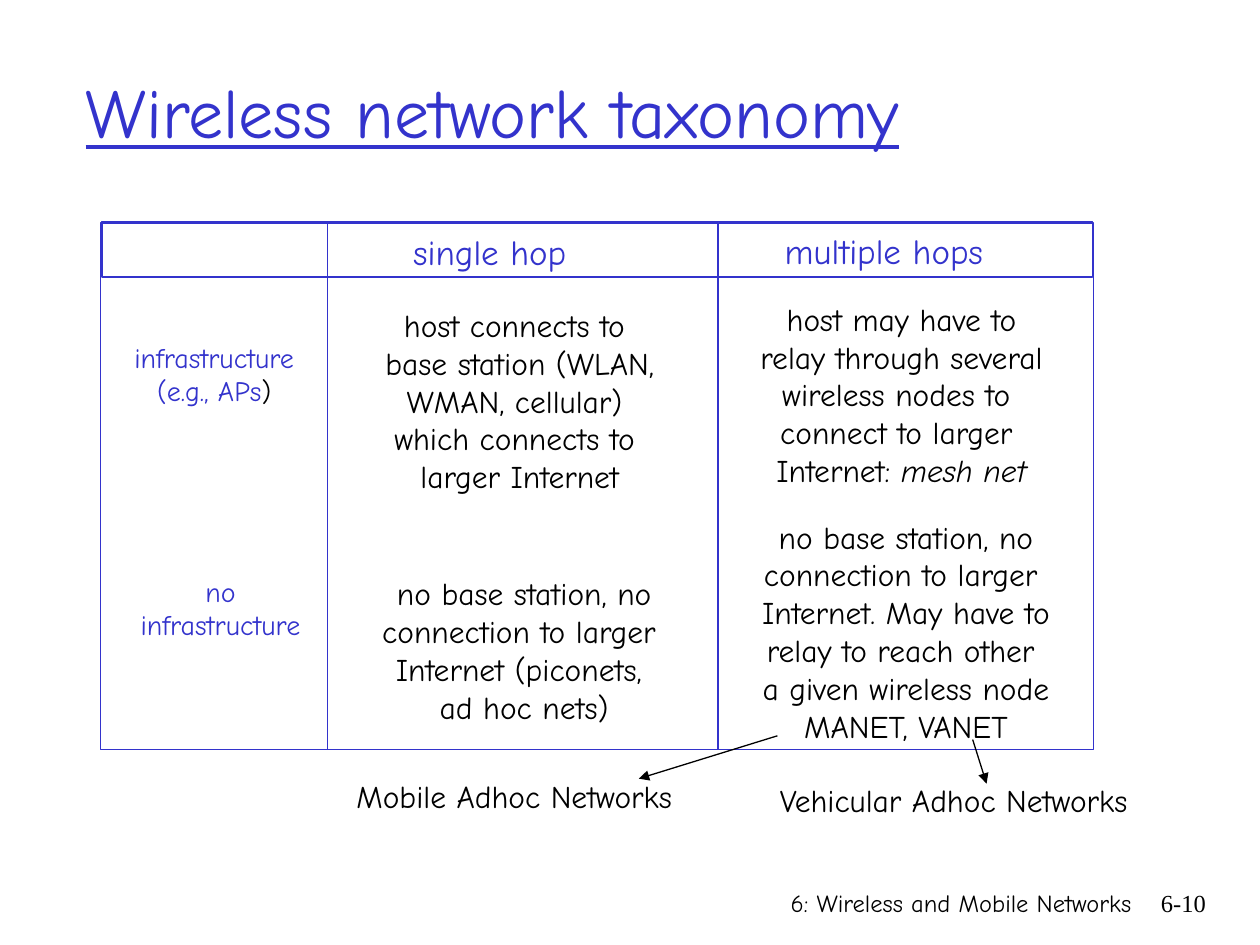
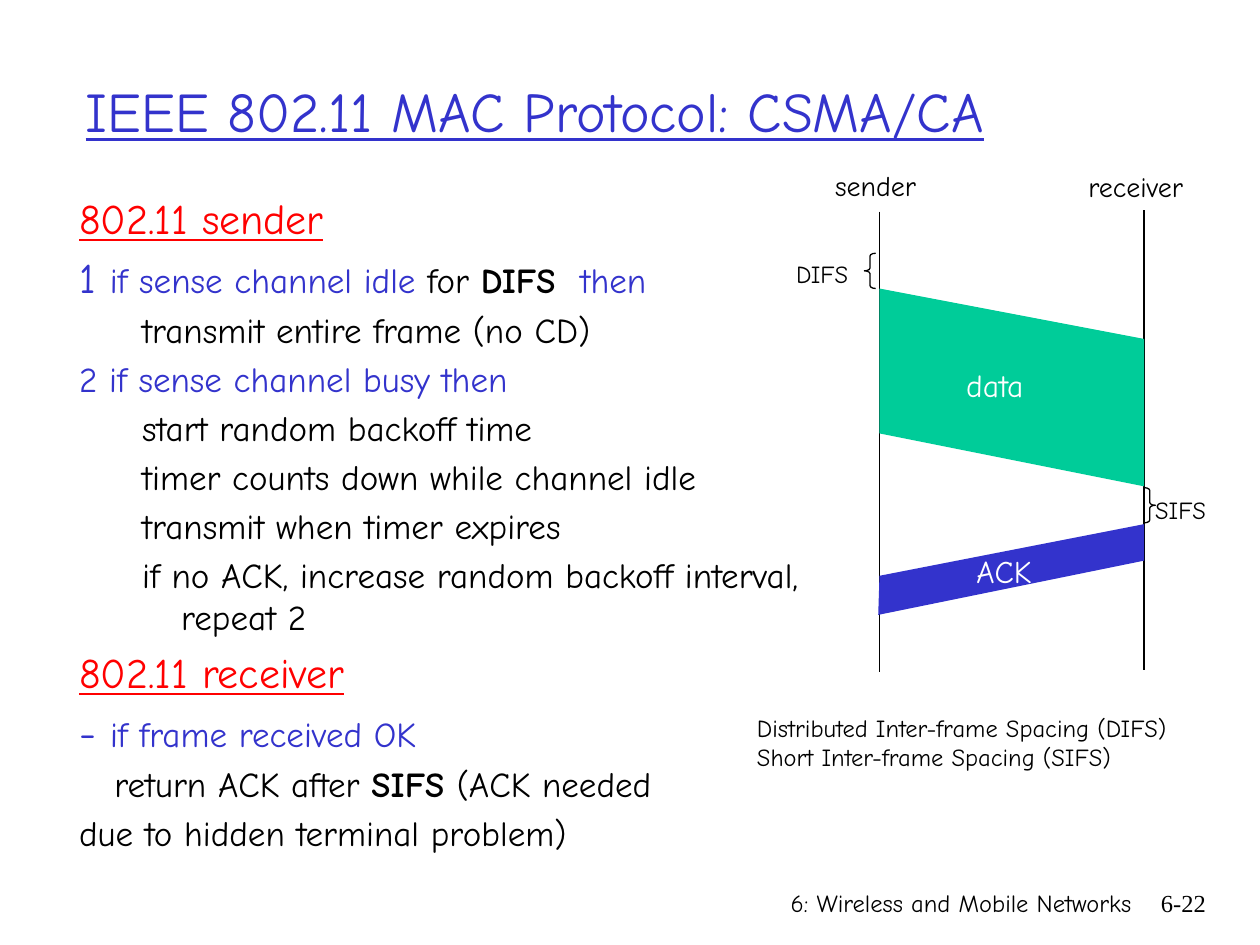
import dataclasses
import typing

import pptx
import pptx.dml.color
import pptx.enum.shapes
import pptx.enum.text
import pptx.oxml
import pptx.oxml.ns
import pptx.shapes.base
import pptx.slide
import pptx.text.text
import pptx.util

EMU_PER_PX = 9144
TITLE_ONLY_LAYOUT = 5
Align = pptx.enum.text.PP_ALIGN
Anchor = pptx.enum.text.MSO_ANCHOR
Fit = pptx.enum.text.MSO_AUTO_SIZE
Preset = pptx.enum.shapes.MSO_SHAPE


@dataclasses.dataclass(frozen=True)
class Theme:
    font: str = "Comic Neue"
    number_font: str = "Times New Roman"
    blue: str = "3333CC"
    black: str = "000000"
    red: str = "FF0000"
    green: str = "00CC99"
    white: str = "FFFFFF"
    title: int = 40
    long_title: int = 32
    heading: int = 24
    body: int = 20
    cell: int = 18
    label: int = 16
    small: int = 14
    line: float = 0.75
    space_before: float = 0.2


THEME = Theme()


class Box(typing.NamedTuple):
    left: int
    top: int
    width: int
    height: int


class Point(typing.NamedTuple):
    x: int
    y: int


@dataclasses.dataclass(frozen=True)
class Run:
    text: str
    color: str | None = None
    size: int | None = None
    bold: bool | None = None
    italic: bool | None = None


Content = str | list[Run]


@dataclasses.dataclass(frozen=True)
class Label:
    box: Box
    lines: list[Content]
    size: int
    color: str = THEME.black
    align: Align = Align.LEFT
    wrap: bool = False


@dataclasses.dataclass(frozen=True)
class Step:
    content: Content
    left: int = 38
    first: int = -38
    size: int = THEME.body
    color: str = THEME.black
    underline: bool | None = None
    tallest: int = THEME.body


@dataclasses.dataclass(frozen=True)
class Line:
    start: Point
    end: Point
    arrow: bool = False


@dataclasses.dataclass(frozen=True)
class Signal:
    corners: list[Point]
    color: str


def px(length: int) -> pptx.util.Emu:
    return pptx.util.Emu(length * EMU_PER_PX)


def rgb(color: str) -> pptx.dml.color.RGBColor:
    return pptx.dml.color.RGBColor.from_string(color)


def write_text(
    paragraph: pptx.text.text._Paragraph,
    content: Content,
    *,
    size: int,
    color: str = THEME.black,
    font: str = THEME.font,
    align: Align = Align.LEFT,
    underline: bool | None = None,
) -> None:
    paragraph.alignment = align
    for part in [Run(content)] if isinstance(content, str) else content:
        run = paragraph.add_run()
        run.text = part.text
        run.font.name = font
        run.font.size = pptx.util.Pt(part.size or size)
        run.font.color.rgb = rgb(part.color or color)
        run.font.bold = part.bold
        run.font.italic = part.italic
        run.font.underline = underline


def add_paragraphs(frame: pptx.text.text.TextFrame, count: int) -> list[pptx.text.text._Paragraph]:
    return [frame.paragraphs[0]] + [frame.add_paragraph() for _ in range(count - 1)]


def add_frame(slide: pptx.slide.Slide, box: Box, wrap: bool = True) -> pptx.text.text.TextFrame:
    frame = slide.shapes.add_textbox(*map(px, box)).text_frame
    frame.word_wrap = wrap
    return frame


def add_label(slide: pptx.slide.Slide, label: Label) -> None:
    frame = add_frame(slide, label.box, label.wrap)
    frame.auto_size = Fit.SHAPE_TO_FIT_TEXT
    for paragraph, content in zip(add_paragraphs(frame, len(label.lines)), label.lines):
        write_text(paragraph, content, size=label.size, color=label.color, align=label.align)


def add_steps(slide: pptx.slide.Slide, box: Box, steps: list[Step]) -> None:
    frame = add_frame(slide, box)
    for paragraph, step in zip(add_paragraphs(frame, len(steps)), steps):
        properties = paragraph._p.get_or_add_pPr()
        properties.set("marL", str(px(step.left)))
        properties.set("indent", str(px(step.first)))
        paragraph.space_before = pptx.util.Pt(step.tallest * THEME.space_before)
        write_text(paragraph, step.content, size=step.size, color=step.color, underline=step.underline)


def add_outline(slide: pptx.slide.Slide, preset: Preset, box: Box, color: str) -> pptx.shapes.base.BaseShape:
    shape = slide.shapes.add_shape(preset, *map(px, box))
    shape.shadow.inherit = False
    shape.fill.background()
    shape.line.color.rgb = rgb(color)
    shape.line.width = pptx.util.Pt(THEME.line)
    return shape


def add_brace(slide: pptx.slide.Slide, preset: Preset, box: Box) -> None:
    brace = add_outline(slide, preset, box, THEME.black)
    brace.adjustments[0] = 0.25
    brace.adjustments[1] = 0.5


def add_line(slide: pptx.slide.Slide, line: Line) -> None:
    connector = slide.shapes.add_connector(
        pptx.enum.shapes.MSO_CONNECTOR.STRAIGHT, *map(px, line.start + line.end)
    )
    connector.line.color.rgb = rgb(THEME.black)
    connector.line.width = pptx.util.Pt(THEME.line)
    properties = connector.element.spPr
    if line.arrow:
        head = pptx.oxml.parse_xml(f'<a:tailEnd {pptx.oxml.ns.nsdecls("a")} type="triangle"/>')
        properties.find(pptx.oxml.ns.qn("a:ln")).append(head)
    properties.append(pptx.oxml.parse_xml(f'<a:effectLst {pptx.oxml.ns.nsdecls("a")}/>'))


def add_signal(slide: pptx.slide.Slide, signal: Signal) -> None:
    start, *others = signal.corners
    builder = slide.shapes.build_freeform(start.x, start.y, scale=EMU_PER_PX)
    builder.add_line_segments(others, close=True)
    shape = builder.convert_to_shape()
    shape.shadow.inherit = False
    shape.fill.solid()
    shape.fill.fore_color.rgb = rgb(signal.color)
    shape.line.fill.background()


def add_slide(presentation: typing.Any, title: str, size: int, number: str) -> pptx.slide.Slide:
    slide = presentation.slides.add_slide(presentation.slide_layouts[TITLE_ONLY_LAYOUT])
    shape = slide.shapes.title
    shape.left, shape.top, shape.width, shape.height = map(px, Box(58, 25, 850, 125))
    frame = shape.text_frame
    frame.auto_size = Fit.NONE
    frame.vertical_anchor = Anchor.MIDDLE
    write_text(frame.paragraphs[0], title, size=size, color=THEME.blue, underline=True)
    footers = [
        (Box(486, 700, 422, 50), "6: Wireless and Mobile Networks", THEME.font),
        (Box(893, 700, 74, 50), number, THEME.number_font),
    ]
    for box, text, font in footers:
        paragraph = add_frame(slide, box).paragraphs[0]
        write_text(paragraph, text, size=THEME.small, font=font, align=Align.RIGHT)
    return slide


def build_taxonomy(presentation: typing.Any) -> None:
    slide = add_slide(presentation, "Wireless network taxonomy", THEME.title, "6-10")
    column_edges = [80, 260, 570, 868]
    columns = [Box(left, 177, right - left, 418) for left, right in zip(column_edges, column_edges[1:])]
    for box in [Box(81, 176, 786, 44), *columns]:
        add_outline(slide, Preset.RECTANGLE, box, THEME.blue)

    headers = [(Box(318, 178, 148, 43), "single hop"), (Box(613, 177, 190, 43), "multiple hops")]
    row_names = [
        (Box(84, 265, 172, 64), ["infrastructure", [Run("(e.g., APs"), Run(")", THEME.black)]]),
        (Box(89, 451, 172, 64), ["no", "infrastructure"]),
    ]
    cells = [
        (Box(292, 238, 241, 160), ["host connects to ", "base station (WLAN,", "WMAN, cellular) ",
                                   "which connects to ", "larger Internet"]),
        (Box(282, 451, 268, 130), ["no base station, no", "connection to larger ",
                                   "Internet (piconets, ", "ad hoc nets)"]),
        (Box(581, 233, 269, 160), ["host may have to", "relay through several", "wireless nodes to ",
                                   "connect to larger ", [Run("Internet: "), Run("mesh net", italic=True)]]),
        (Box(580, 406, 278, 190), ["no base station, no", "connection to larger ", "Internet. May have to",
                                   "relay to reach other ", "a given wireless node", "MANET, VANET"]),
    ]
    expansions = [
        (Box(273, 612, 299, 40), "Mobile Adhoc Networks"),
        (Box(609, 615, 331, 40), "Vehicular Adhoc Networks"),
    ]
    labels = [Label(box, [text], THEME.body, THEME.blue) for box, text in headers]
    labels += [Label(box, lines, THEME.label, THEME.blue, Align.CENTER) for box, lines in row_names]
    labels += [Label(box, lines, THEME.cell, align=Align.CENTER) for box, lines in cells]
    labels += [Label(box, [text], THEME.cell) for box, text in expansions]
    for label in labels:
        add_label(slide, label)
    add_line(slide, Line(Point(617, 584), Point(507, 618), arrow=True))
    add_line(slide, Line(Point(772, 587), Point(783, 622), arrow=True))


def heading(text: str) -> Step:
    return Step(text, size=THEME.heading, color=THEME.red, underline=True, tallest=THEME.heading)


def condition(marker: str, *parts: Run) -> Step:
    return Step([Run(marker, size=THEME.heading), *parts], color=THEME.blue, tallest=THEME.heading)


def action(text: str) -> Step:
    return Step(text, left=81, first=-31)


def build_protocol(presentation: typing.Any) -> None:
    slide = add_slide(presentation, "IEEE 802.11 MAC Protocol: CSMA/CA", THEME.long_title, "6-22")
    add_steps(slide, Box(53, 148, 616, 542), [
        heading("802.11 sender"),
        condition("1 ", Run("if sense channel idle"), Run(" for ", THEME.black),
                  Run("DIFS  ", THEME.black, bold=True), Run("then")),
        action("transmit entire frame (no CD)"),
        Step("2 if sense channel busy then", color=THEME.blue),
        action("start random backoff time"),
        action("timer counts down while channel idle"),
        action("transmit when timer expires"),
        action("if no ACK, increase random backoff interval, repeat 2"),
        heading("802.11 receiver"),
        condition("- ", Run("if frame received OK")),
        Step([Run("return ACK after "), Run("SIFS ", bold=True), Run("(ACK needed")], left=28, first=0),
        Step("due to hidden terminal problem)"),
    ])

    sender_x, receiver_x = 698, 908
    add_line(slide, Line(Point(sender_x, 168), Point(sender_x, 533)))
    add_line(slide, Line(Point(receiver_x, 167), Point(receiver_x, 532)))
    add_brace(slide, Preset.LEFT_BRACE, Box(686, 201, 9, 28))
    add_brace(slide, Preset.RIGHT_BRACE, Box(receiver_x, 387, 9, 28))
    data = [Point(sender_x, 229), Point(receiver_x, 269), Point(receiver_x, 386), Point(sender_x, 344)]
    acknowledgement = [Point(697, 488), Point(receiver_x, 445), Point(receiver_x, 416), Point(sender_x, 457)]
    add_signal(slide, Signal(data, THEME.green))
    add_signal(slide, Signal(acknowledgement, THEME.blue))

    for label in [
        Label(Box(653, 129, 91, 37), ["sender"], THEME.label),
        Label(Box(854, 130, 107, 37), ["receiver"], THEME.label),
        Label(Box(622, 201, 70, 33), ["DIFS"], THEME.small),
        Label(Box(907, 388, 70, 33), ["SIFS"], THEME.small),
        Label(Box(757, 286, 72, 40), ["data"], THEME.cell, THEME.white),
        Label(Box(765, 433, 69, 40), ["ACK"], THEME.cell, THEME.white),
        Label(Box(591, 561, 396, 57),
              ["Distributed Inter-frame Spacing (DIFS)", "Short Inter-frame Spacing (SIFS)"],
              THEME.small, wrap=True),
    ]:
        add_label(slide, label)


def main() -> None:
    presentation = pptx.Presentation()
    presentation.slide_width, presentation.slide_height = px(1000), px(750)
    build_taxonomy(presentation)
    build_protocol(presentation)
    presentation.save("out.pptx")


if __name__ == "__main__":
    main()
